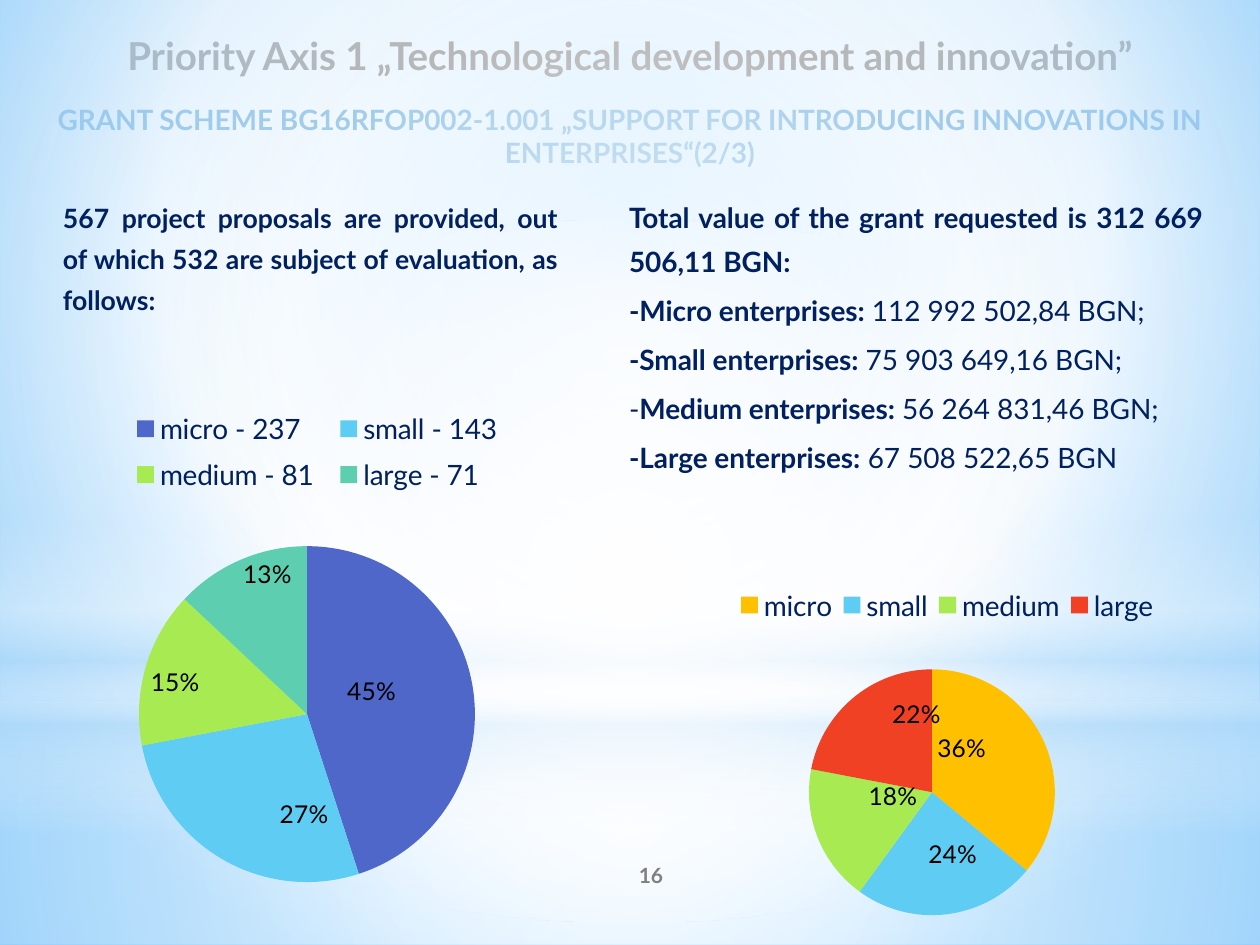
import pptx
import pptx.chart.data
import pptx.dml.color
import pptx.enum.chart
import pptx.enum.shapes
import pptx.enum.text
import pptx.oxml
import pptx.oxml.ns
import pptx.util

PX = 914400 // 126
FONT = "Lato"
COLORS = {
    "title": "404040", "scheme": "0D79CA", "navy": "002060", "number": "808080", "label": "000000",
    "white": "FFFFFF", "sky": "B4DCFA", "bg_inner": "9ED5FF", "bg_outer": "5BB9FF",
    "indigo": "4E67C8", "cyan": "5ECCF3", "lime": "A7EA52", "teal": "5DCEAF",
    "amber": "FFC000", "red": "F14124",
}

TITLE = "Priority Axis 1 „Technological development and innovation”"
SCHEME = "GRANT SCHEME BG16RFOP002-1.001 „SUPPORT FOR INTRODUCING INNOVATIONS IN ENTERPRISES“(2/3)"
# Each paragraph is a list of (text, bold) runs.
PROPOSALS = [[("567 project proposals are provided, out of which 532 are subject of evaluation, "
               "as follows:", True)]]
GRANTS = [
    [("Total value of the grant requested is 312 669 506,11 BGN:", True)],
    [("-Micro enterprises: ", True), ("112 992 502,84 BGN;", False)],
    [("-Small enterprises: ", True), ("75 903 649,16 BGN;", False)],
    [("-", False), ("Medium enterprises: ", True), ("56 264 831,46 BGN;", False)],
    [("-Large enterprises:", True), (" 67 508 522,65 BGN", False)],
]

# slices: name, percent, color, label offset from the slice centre in px
# plot and legend: x, y, width, height as fractions of the chart
PIES = [
    {"box": (54, 373, 506, 525), "plot": (0, 0.33, 1, 0.64), "legend": (0.13, 0.05, 0.78, 0.2),
     "slices": [("micro - 237", 45, "indigo", (-18, -10)), ("small - 143", 27, "cyan", (40, 27)),
                ("medium - 81", 15, "lime", (-51, -9)), ("large - 71", 13, "teal", (-6, -63))]},
    {"box": (679, 552, 506, 367), "plot": (0, 0.32, 1, 0.67), "legend": (0.1, 0.09, 0.86, 0.11),
     "slices": [("micro", 36, "amber", (-26, -18)), ("small", 24, "cyan", (13, 0)),
                ("medium", 18, "lime", (18, -19)), ("large", 22, "red", (24, -31))]},
]

# Gradient stops: position %, color, opacity %
BACKGROUND = [(0, "bg_inner", 100), (60, "white", 100), (100, "bg_outer", 100)]
CENTRE = (50, 50, 50, 50)
GLOWS = [
    ("RECTANGLE", (0, 703, 1260, 242), CENTRE,
     [(0, "white", 91), (37, "white", 76), (100, "sky", 79)]),
    ("RECTANGLE", (0, 0, 1260, 703), CENTRE,
     [(0, "white", 89), (48, "white", 62), (100, "sky", 79)]),
    ("RECTANGLE", (0, 519, 1260, 315), None,
     [(0, "white", 0), (29, "white", 30), (45, "sky", 40),
      (55, "white", 26), (65, "sky", 60), (100, "white", 0)]),
    ("OVAL", (0, 220, 1260, 703), CENTRE, [(0, "white", 100), (56, "white", 0)]),
]


def px(values):
    return [value * PX for value in values]


def rgb(name):
    return pptx.dml.color.RGBColor.from_string(COLORS[name])


def set_gradient(properties, stops, focus):
    """Swap the solid fill for a gradient: circular around focus, or top to bottom without one."""
    marks = "".join(
        f'<a:gs pos="{pos * 1000}"><a:srgbClr val="{COLORS[color]}">'
        f'<a:alpha val="{opacity * 1000}"/></a:srgbClr></a:gs>' for pos, color, opacity in stops)
    if focus:
        sides = " ".join(f'{side}="{value * 1000}"' for side, value in zip("ltrb", focus))
        direction = f'<a:path path="circle"><a:fillToRect {sides}/></a:path>'
    else:
        direction = '<a:lin ang="5400000" scaled="0"/>'
    gradient = pptx.oxml.parse_xml(
        f'<a:gradFill {pptx.oxml.ns.nsdecls("a")} rotWithShape="1">'
        f'<a:gsLst>{marks}</a:gsLst>{direction}</a:gradFill>')
    solid = properties.find(pptx.oxml.ns.qn("a:solidFill"))
    properties.replace(solid, gradient)


def add_backdrop(slide):
    slide.background.fill.solid()
    background = slide.element.find(".//" + pptx.oxml.ns.qn("p:bgPr"))
    set_gradient(background, BACKGROUND, (20, 10, 20, 60))
    for kind, box, focus, stops in GLOWS:
        glow = slide.shapes.add_shape(getattr(pptx.enum.shapes.MSO_SHAPE, kind), *px(box))
        glow.shadow.inherit = False
        glow.line.fill.background()
        glow.fill.solid()
        set_gradient(glow.element.spPr, stops, focus)


def style(font, size, color, bold=None):
    font.name, font.size, font.bold = FONT, pptx.util.Pt(size), bold
    font.color.rgb = rgb(color)


def fill_title(title):
    title.left, title.top, title.width, title.height = px((15, 16, 1230, 169))
    frame = title.text_frame
    frame.word_wrap = True
    frame.auto_size = pptx.enum.text.MSO_AUTO_SIZE.NONE
    frame.vertical_anchor = pptx.enum.text.MSO_ANCHOR.MIDDLE
    frame.text = TITLE + "\n" + SCHEME
    for paragraph, size, color in zip(frame.paragraphs, (22, 16), ("title", "scheme")):
        paragraph.alignment = pptx.enum.text.PP_ALIGN.CENTER
        style(paragraph.font, size, color, True)
    frame.paragraphs[1].space_before = pptx.util.Pt(14)


def add_text(slide, box, paragraphs, size, top_inset=6):
    frame = slide.shapes.add_textbox(*px(box)).text_frame
    frame.word_wrap = True
    frame.margin_left, frame.margin_top = px((38, top_inset))
    for index, runs in enumerate(paragraphs):
        paragraph = frame.paragraphs[0] if index == 0 else frame.add_paragraph()
        paragraph.alignment = pptx.enum.text.PP_ALIGN.JUSTIFY
        paragraph.line_spacing = 1.3
        paragraph.space_after = pptx.util.Pt(3)
        style(paragraph.font, size, "navy")
        for text, bold in runs:
            run = paragraph.add_run()
            run.text = text
            run.font.bold = bold


def manual_layout(x, y, size=None, inner=False, edge=True):
    parts = '<c:layoutTarget val="inner"/>' if inner else ""
    if edge:
        parts += '<c:xMode val="edge"/><c:yMode val="edge"/>'
    parts += f'<c:x val="{x:.3f}"/><c:y val="{y:.3f}"/>'
    if size:
        parts += f'<c:w val="{size[0]}"/><c:h val="{size[1]}"/>'
    return pptx.oxml.parse_xml(f'<c:layout {pptx.oxml.ns.nsdecls("c")}>'
                               f'<c:manualLayout>{parts}</c:manualLayout></c:layout>')


def add_pie(slide, box, plot, legend, slices):
    qn = pptx.oxml.ns.qn
    data = pptx.chart.data.CategoryChartData()
    data.categories = [name for name, *_ in slices]
    data.add_series("Series 1", [percent for _, percent, *_ in slices])
    chart = slide.shapes.add_chart(pptx.enum.chart.XL_CHART_TYPE.PIE, *px(box), data).chart
    style(chart.font, 18, "label")
    chart.has_title = False
    chart.has_legend = True
    chart.legend.position = pptx.enum.chart.XL_LEGEND_POSITION.TOP
    chart.legend.include_in_layout = False
    style(chart.legend.font, 16, "navy")

    plot_area = chart.element.find(".//" + qn("c:plotArea"))
    legend_part = chart.element.find(".//" + qn("c:legend"))
    for part in (plot_area, legend_part):
        for automatic in part.findall(qn("c:layout")):
            part.remove(automatic)
    plot_area.insert(0, manual_layout(*plot[:2], plot[2:], inner=True))
    legend_part.find(qn("c:legendPos")).addnext(manual_layout(*legend[:2], legend[2:]))

    chart.plots[0].vary_by_categories = True
    series = chart.plots[0].series[0]
    labels = series.data_labels
    labels.show_value, labels.show_percentage = False, True
    labels.number_format, labels.number_format_is_linked = "0%", False
    style(labels.font, 14, "label")
    for index, (_, _, color, (dx, dy)) in enumerate(slices):
        point = series.points[index]
        point.format.fill.solid()
        point.format.fill.fore_color.rgb = rgb(color)
        style(point.data_label.font, 14, "label")
        point.data_label.position = pptx.enum.chart.XL_LABEL_POSITION.CENTER
    for label, (*_, (dx, dy)) in zip(chart.element.iter(qn("c:dLbl")), slices):
        label.insert(1, manual_layout(dx / box[2], dy / box[3], edge=False))
        label.find(qn("c:showVal")).set("val", "0")
        label.find(qn("c:showPercent")).set("val", "1")


def main():
    deck = pptx.Presentation()
    deck.slide_width, deck.slide_height = px((1260, 945))
    slide = deck.slides.add_slide(deck.slide_layouts[5])
    add_backdrop(slide)
    fill_title(slide.shapes.title)
    add_text(slide, (591, 185, 625, 318), GRANTS, 16)
    add_text(slide, (25, 165, 546, 208), PROPOSALS, 15.2, top_inset=27)
    for pie in PIES:
        add_pie(slide, **pie)

    number = slide.shapes.add_textbox(*px((525, 850, 252, 50))).text_frame
    number.word_wrap = True
    number.vertical_anchor = pptx.enum.text.MSO_ANCHOR.MIDDLE
    number.text = "16"
    number.paragraphs[0].alignment = pptx.enum.text.PP_ALIGN.CENTER
    style(number.paragraphs[0].font, 12, "number", True)
    deck.save("out.pptx")


if __name__ == "__main__":
    main()
